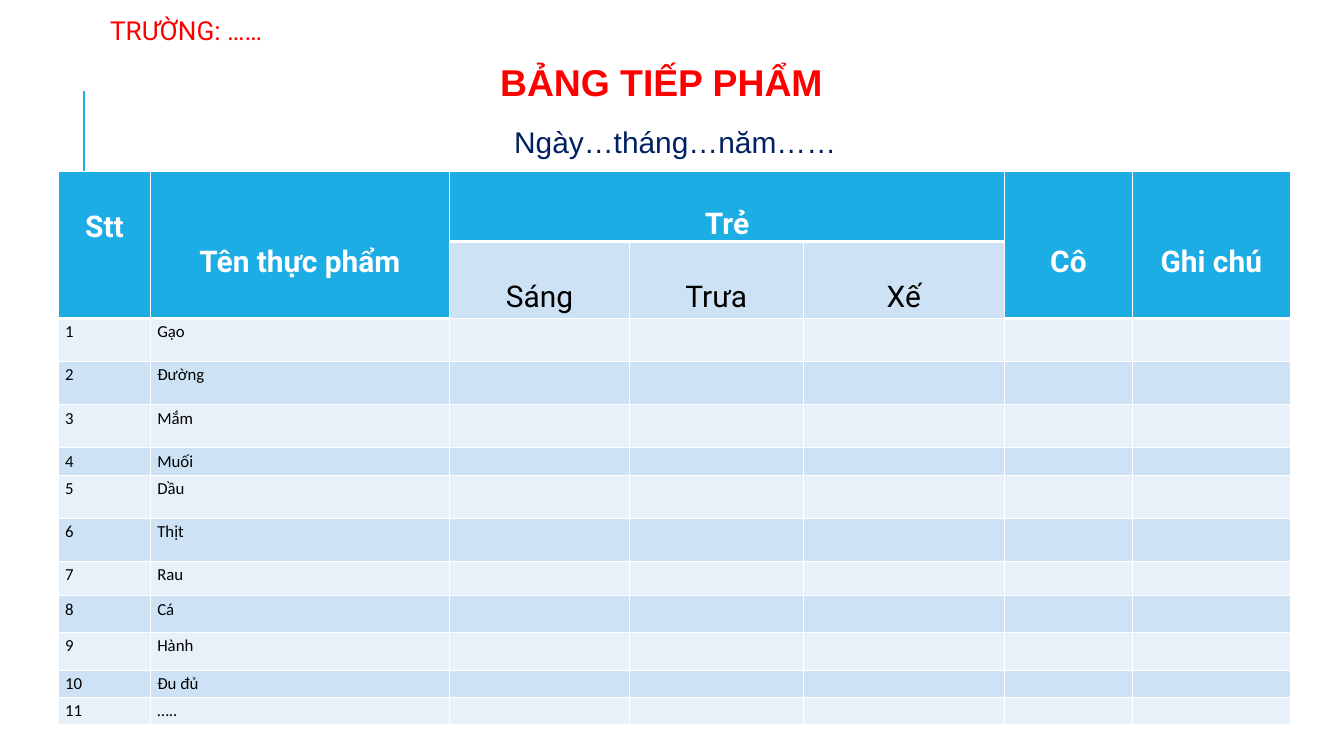
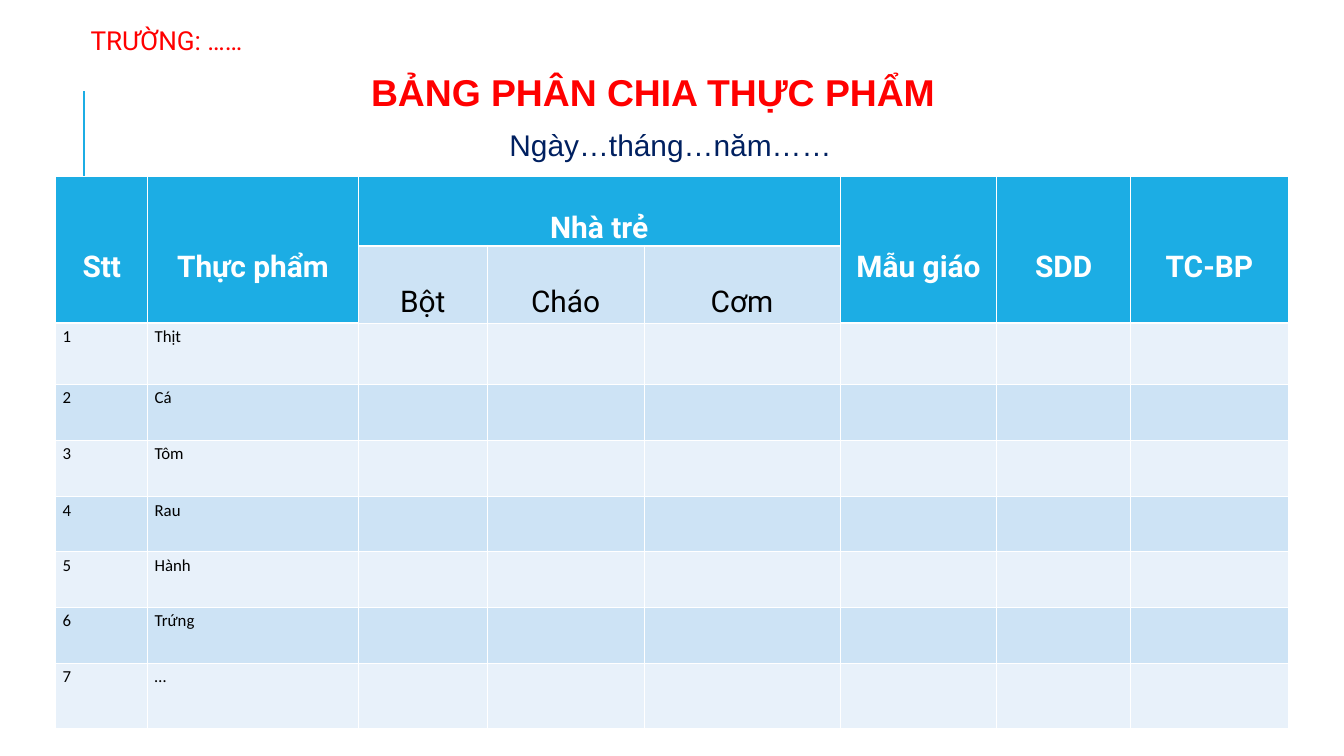
import dataclasses

import pptx
import pptx.dml.color
import pptx.enum.shapes
import pptx.enum.text
import pptx.oxml
import pptx.util
from pptx.util import Cm

ACCENT, BAND_DARK, BAND_LIGHT = "1CADE4", "CDE3F5", "E8F1FA"
RED, NAVY, WHITE, BLACK = "FF0000", "002060", "FFFFFF", "000000"
ALIGN = pptx.enum.text.PP_ALIGN
ANCHOR = pptx.enum.text.MSO_ANCHOR
DRAWING_NS = "http://schemas.openxmlformats.org/drawingml/2006/main"


@dataclasses.dataclass
class Heading:
    """Title block: place in cm, wording and the indents of its lines."""
    place: tuple[float, float, float, float]
    name: str
    name_indent: float
    date_indent: float
    date_gap: float


@dataclasses.dataclass
class FoodTable:
    """Food list whose columns 2 to 4 share one group header."""
    left: float
    top: float
    widths: list[float]
    heights: list[float]
    headers: list[str]
    group: list[str]
    foods: list[str]
    number_anchor: ANCHOR


def color(value: str) -> pptx.dml.color.RGBColor:
    """Turn a hex string into a colour."""
    return pptx.dml.color.RGBColor.from_string(value)


def write(paragraph, text: str, *, size: float, font: str, fill: str,
          bold: bool = False, align=ALIGN.LEFT, spacing: float = 1.0) -> None:
    """Put formatted text into a paragraph."""
    run = paragraph.add_run()
    run.text = text
    run.font.size = pptx.util.Pt(size)
    run.font.name = font
    run.font.bold = bold
    run.font.color.rgb = color(fill)
    paragraph.alignment = align
    paragraph.line_spacing = spacing


def add_side_rule(slide) -> None:
    """Place the vertical rule on the layout that the slides share."""
    rule = slide.shapes.add_connector(
        pptx.enum.shapes.MSO_CONNECTOR.STRAIGHT, Cm(3.18), Cm(7.26), Cm(3.18), Cm(3.45))
    rule.line.color.rgb = color(ACCENT)
    rule.line.width = pptx.util.Pt(1.5)
    rule.element.spPr.append(pptx.oxml.parse_xml(f'<a:effectLst xmlns:a="{DRAWING_NS}"/>'))
    rule.element.nvCxnSpPr.cNvPr.set("id", "20")
    slide.slide_layout.shapes.element.append(rule.element)


def add_heading(slide, heading: Heading) -> None:
    """Fill the title with the school, the name of the form and the date."""
    title = slide.shapes.title
    title.left, title.top, title.width, title.height = map(Cm, heading.place)
    frame = title.text_frame
    frame.word_wrap = True
    frame.auto_size = pptx.enum.text.MSO_AUTO_SIZE.NONE
    frame.vertical_anchor = ANCHOR.TOP
    lines = [
        ("TRƯỜNG: ……", 1.9, 6, dict(size=28, font="Roboto", fill=RED)),
        (heading.name, heading.name_indent, 6,
         dict(size=40, font="Arial", fill=RED, bold=True)),
        ("Ngày…tháng…năm……", heading.date_indent, heading.date_gap,
         dict(size=32, font="Arial", fill=NAVY)),
    ]
    for number, (text, indent, gap, style) in enumerate(lines):
        paragraph = frame.add_paragraph() if number else frame.paragraphs[0]
        write(paragraph, text, spacing=1.05, **style)
        paragraph.space_before = pptx.util.Pt(gap)
        paragraph.space_after = pptx.util.Pt(6)
        properties = paragraph._p.get_or_add_pPr()
        properties.set("marL", str(Cm(indent)))
        properties.set("indent", "0")


def style_cell(cell, fill: str, bottom: float) -> None:
    """Give a cell white borders and a plain fill."""
    properties = cell._tc.get_or_add_tcPr()
    for side, points in (("L", 1), ("R", 1), ("T", 1), ("B", bottom)):
        properties.append(pptx.oxml.parse_xml(
            f'<a:ln{side} xmlns:a="{DRAWING_NS}" w="{pptx.util.Pt(points)}"><a:solidFill>'
            f'<a:srgbClr val="{WHITE}"/></a:solidFill></a:ln{side}>'))
    cell.fill.solid()
    cell.fill.fore_color.rgb = color(fill)


def write_header(cell, text: str, column: int, *, fill: str, bold: bool) -> None:
    """Write a centred column header."""
    cell.vertical_anchor = ANCHOR.MIDDLE
    if 1 <= column <= 4:
        cell.margin_left = cell.margin_right = cell.margin_top = cell.margin_bottom = 0
    write(cell.text_frame.paragraphs[0], text, size=32, font="Roboto", fill=fill,
          bold=bold, align=ALIGN.CENTER, spacing=2.0)


def add_food_table(slide, food_table: FoodTable) -> None:
    """Draw a two-row header and one numbered row for each food."""
    widths, heights = food_table.widths, food_table.heights
    grid = slide.shapes.add_table(
        len(heights), len(widths), Cm(food_table.left), Cm(food_table.top),
        Cm(sum(widths)), Cm(sum(heights))).table
    for column, width in zip(grid.columns, widths):
        column.width = Cm(width)
    for number, (row, height) in enumerate(zip(grid.rows, heights)):
        row.height = Cm(height)
        fill = BAND_DARK if number % 2 else BAND_LIGHT
        for cell in row.cells:
            style_cell(cell, fill if number else ACCENT, 1 if number else 3)

    header_columns = [0, 1, 2, *range(5, len(widths))]
    for column, text in zip(header_columns, food_table.headers):
        header = grid.cell(0, column)
        header.merge(grid.cell(0, 4) if column == 2 else grid.cell(1, column))
        write_header(header, text, column, fill=WHITE, bold=True)
    grid.cell(0, 0).vertical_anchor = food_table.number_anchor
    for column, text in enumerate(food_table.group, 2):
        write_header(grid.cell(1, column), text, column, fill=BLACK, bold=False)
    for number, food in enumerate(food_table.foods, 1):
        for column, text in enumerate((str(number), food)):
            write(grid.cell(number + 1, column).text_frame.paragraphs[0], text,
                  size=18, font="Calibri", fill=BLACK)


FORMS = [
    (Heading((2.01, 0.36, 46.56, 5.74), "BẢNG TIẾP PHẨM", 16.64, 17.17, 13),
     FoodTable(
         2.21, 6.48,
         [3.48, 11.3, 6.81, 6.55, 7.62, 4.83, 5.97],
         [2.11, 2.16, 1.63, 1.63, 1.63, 0.53, 1.63, 1.63, 1.3, 1.37, 1.45, 0.81, 0.81],
         ["Stt", "Tên thực phẩm", "Trẻ", "Cô", "Ghi chú"],
         ["Sáng", "Trưa", "Xế"],
         ["Gạo", "Đường", "Mắm", "Muối", "Dầu", "Thịt", "Rau", "Cá", "Hành",
          "Đu đủ", "….."],
         ANCHOR.TOP)),
    (Heading((1.27, 0.74, 46.56, 5.38), "BẢNG PHÂN CHIA THỰC PHẨM", 12.5, 17.73, 6),
     FoodTable(
         2.11, 6.65,
         [3.48, 7.95, 4.88, 5.92, 7.42, 5.92, 5.05, 5.97],
         [2.54, 2.59, 2.31, 2.13, 2.13, 2.08, 2.11, 2.11, 2.46],
         ["Stt", "Thực phẩm", "Nhà trẻ", "Mẫu giáo", "SDD", "TC-BP"],
         ["Bột", "Cháo", "Cơm"],
         ["Thịt", "Cá", "Tôm", "Rau", "Hành", "Trứng", "…"],
         ANCHOR.MIDDLE)),
]


def main() -> None:
    """Build the forms and save them."""
    deck = pptx.Presentation()
    deck.slide_width = Cm(50.8)
    deck.slide_height = deck.slide_width * 9 // 16
    for number, (heading, food_table) in enumerate(FORMS):
        slide = deck.slides.add_slide(deck.slide_layouts[5])
        if number == 0:
            add_side_rule(slide)
        add_heading(slide, heading)
        add_food_table(slide, food_table)
    deck.save("out.pptx")


if __name__ == "__main__":
    main()
